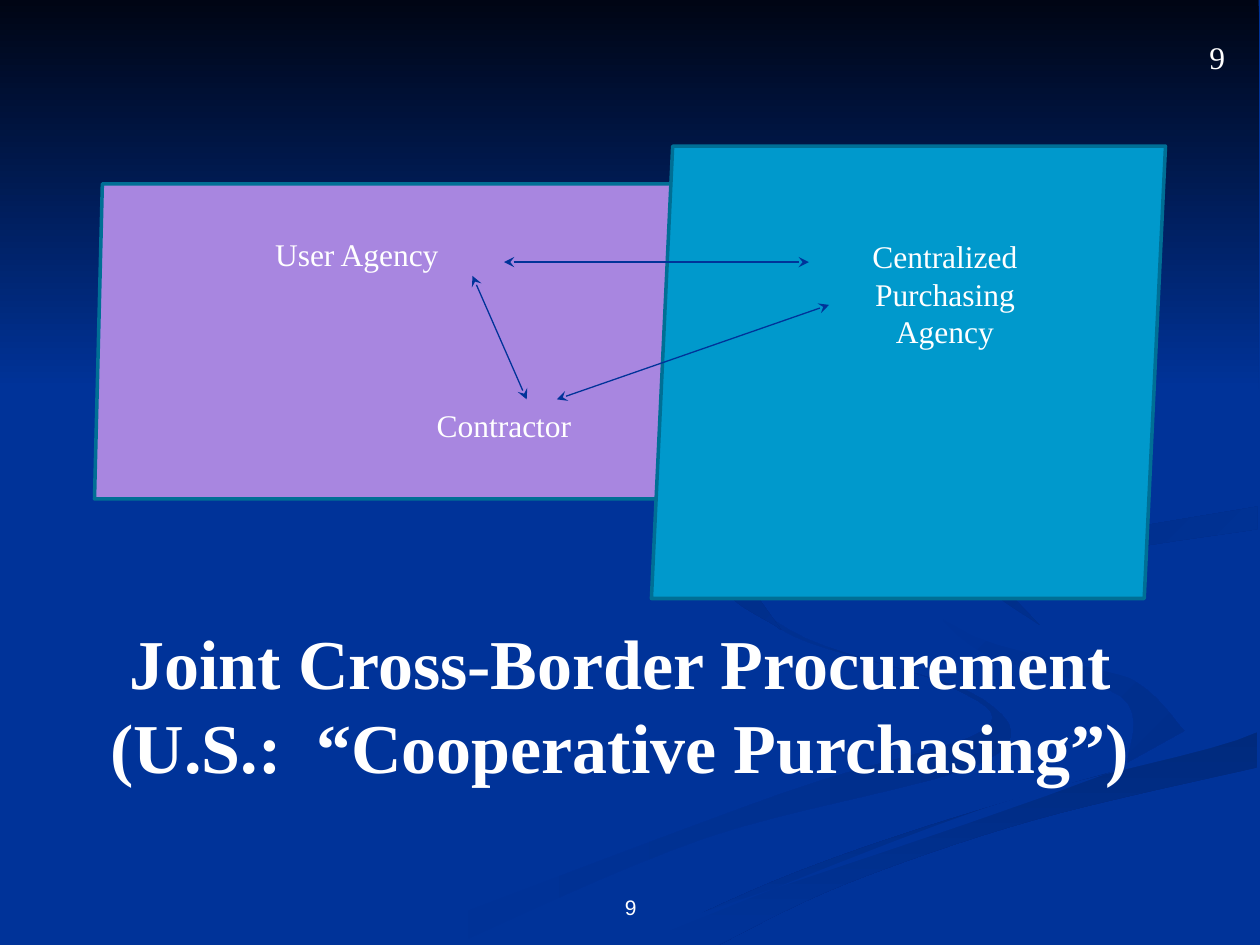
import pptx
import pptx.util
import pptx.dml.color
import pptx.enum.shapes
import pptx.enum.text
import pptx.oxml.ns
import pptx.oxml.xmlchemy

Inches = pptx.util.Inches
SHAPE = pptx.enum.shapes.MSO_SHAPE
ALIGN = pptx.enum.text.PP_ALIGN
ANCHOR = pptx.enum.text.MSO_ANCHOR
SERIF = "Times New Roman"

HUES = {
    "base": "003399", "night": "000514", "white": "FFFFFF",
    "edge": "006F95", "lilac": "A886E0", "cyan": "0099CC",
    "dim1": "002E8B", "dim2": "002A7D", "dim3": "002D86", "dim4": "002B82",
}

# Swirls: first colour, last colour, angle, one edge out, other edge back
SWIRLS = [
    ("base", "dim1", 0,
     [(5.75, 4.6), (6.3, 5.05), (7.5, 5.43), (7.8, 5.8), (6.2, 6.3), (3, 7.5)],
     [(3.6, 7.5), (5.6, 6.65), (7.8, 6.05), (7.8, 5.55), (6.4, 5.07), (5.75, 4.6)]),
    ("base", "dim1", 45,
     [(7.25, 4.65), (7.8, 5.18), (8.9, 5.53), (8.95, 6.05)],
     [(9.4, 5.8), (8.9, 5.35), (7.6, 4.98), (7.25, 4.65)]),
    ("dim2", "base", 90,
     [(5.03, 7.5), (6.3, 6.93), (7.8, 6.42), (9.98, 5.81)],
     [(9.98, 6.09), (8.2, 6.51), (6.7, 7.02), (5.7, 7.5)]),
    ("base", "base", 0,
     [(9.98, 3.87), (7.7, 4.27), (7.6, 4.98), (9.2, 5.47), (9.2, 5.97), (4.8, 7.5)],
     [(5.03, 7.5), (7.8, 6.42), (9.98, 5.81), (9.98, 5.38), (7.85, 4.7), (9.98, 4.02)]),
    ("dim3", "base", 45,
     [(9.98, 4.02), (8.2, 4.34), (7.8, 4.6), (8.25, 4.96)],
     [(8.05, 4.75), (8.6, 4.43), (9.98, 4.2)]),
    ("dim4", "base", 45,
     [(7.6, 2.33), (8.9, 3.35), (7.6, 3.98), (5.8, 4.55), (6.2, 5)],
     [(5.95, 4.65), (7.4, 4.21), (8.9, 3.5), (7.6, 2.33)]),
]

# Nations: box, slant, fill
LANDS = [
    ((0.75, 1.46, 5.42, 2.5), 0.025, "lilac"),
    ((5.17, 1.16, 4.08, 3.59), 0.047, "cyan"),
]
TITLE = "Joint Cross-Border Procurement\v(U.S.:  “Cooperative Purchasing”)"
# Text, box, align, anchor, font, size
LABELS = [
    ("9", (9.5, 0.25, 0.5, 0.4), ALIGN.LEFT, ANCHOR.TOP, SERIF, 18),
    ("9", (3.42, 6.83, 3.17, 0.52), ALIGN.CENTER, ANCHOR.BOTTOM, "Arial", 12),
    ("Centralized Purchasing Agency", (6.75, 1.83, 1.5, 1.01),
     ALIGN.CENTER, ANCHOR.TOP, SERIF, 18),
    ("User Agency", (2.08, 1.82, 1.5, 0.4), ALIGN.RIGHT, ANCHOR.TOP, SERIF, 18),
    ("Contractor", (3.25, 3.17, 1.5, 0.4), ALIGN.CENTER, ANCHOR.TOP, SERIF, 18),
]
ARROWS = [(4, 2.08, 6.42, 2.08), (4.42, 3.17, 6.58, 2.42), (3.75, 2.19, 4.18, 3.17)]


def hue(name):
    return pptx.dml.color.RGBColor.from_string(HUES[name])


def span(nums):
    return [Inches(n) for n in nums]


def paint(fill, name):
    fill.solid()
    fill.fore_color.rgb = hue(name)


def blend(fill, first, last, angle):
    fill.gradient()
    fill.gradient_angle = -angle % 360
    for stop, name in zip(fill.gradient_stops, (first, last)):
        stop.color.rgb = hue(name)


def put(item, vals):
    for key, val in vals.items():
        setattr(item, key, val)


def write(shape, text, align, anchor, font, size, bold=False):
    frame = shape.text_frame
    put(frame, {"word_wrap": True, "vertical_anchor": anchor,
                "auto_size": pptx.enum.text.MSO_AUTO_SIZE.NONE})
    para = frame.paragraphs[0]
    para.text = text
    para.alignment = align
    for run in para.runs:
        put(run.font, {"name": font, "size": pptx.util.Pt(size), "bold": bold})
        run.font.color.rgb = hue("white")


def curve(dots, steps=8):
    """Smooth line through the dots (Catmull-Rom)."""
    ring = [dots[0], *dots, dots[-1]]
    line = []
    for four in zip(ring, ring[1:], ring[2:], ring[3:]):
        for step in range(steps):
            t = step / steps
            line.append([
                b + t * (c - a) / 2 + t ** 2 * (a - 2.5 * b + 2 * c - d / 2)
                + t ** 3 * (3 * (b - c) + d - a) / 2
                for a, b, c, d in zip(*four)])
    return line + [dots[-1]]


def swirl(shapes, first, last, angle, out, back):
    dots = [span(dot) for dot in curve(out) + curve(back)]
    pen = shapes.build_freeform(*dots[0], scale=1.0)
    pen.add_line_segments(dots[1:], close=True)
    form = pen.convert_to_shape()
    form.shadow.inherit = False
    form.line.fill.background()
    if first == last:
        paint(form.fill, first)
    else:
        blend(form.fill, first, last, angle)


def arrow(shapes, ends):
    make = pptx.oxml.xmlchemy.OxmlElement
    link = shapes.add_connector(pptx.enum.shapes.MSO_CONNECTOR.STRAIGHT, *span(ends))
    link.line.width = pptx.util.Pt(0.75)
    paint(link.line.fill, "base")
    props = link.element.spPr
    line = props.find(pptx.oxml.ns.qn("a:ln"))
    for tag in ("a:headEnd", "a:tailEnd"):
        tip = make(tag)
        tip.set("type", "stealth")
        line.append(tip)
    props.append(make("a:effectLst"))


def main():
    deck = pptx.Presentation()
    put(deck, {"slide_width": Inches(10), "slide_height": Inches(7.5)})
    slide = deck.slides.add_slide(deck.slide_layouts[5])
    shapes = slide.shapes
    paint(slide.background.fill, "base")

    # Backdrop
    for part in SWIRLS:
        swirl(shapes, *part)
    sky = shapes.add_shape(SHAPE.RECTANGLE, *span((0, 0, 9.99, 3.09)))
    sky.shadow.inherit = False
    sky.line.fill.background()
    blend(sky.fill, "night", "base", 90)

    # Title, brought in front of the backdrop
    title = shapes.title
    put(title, dict(zip(("left", "top", "width", "height"), span((0.42, 5, 9, 1.17)))))
    write(title, TITLE, ALIGN.CENTER, ANCHOR.MIDDLE, SERIF, 40, True)
    title.element.getparent().append(title.element)

    # Nations
    for box, slant, name in LANDS:
        land = shapes.add_shape(SHAPE.PARALLELOGRAM, *span(box))
        land.shadow.inherit = False
        land.adjustments[0] = slant
        paint(land.fill, name)
        paint(land.line.fill, "edge")
        land.line.width = pptx.util.Pt(2)

    # Labels and page numbers
    for text, box, *look in LABELS:
        write(shapes.add_textbox(*span(box)), text, *look)

    # Links between the parties
    for ends in ARROWS:
        arrow(shapes, ends)
    deck.save("out.pptx")


if __name__ == "__main__":
    main()
